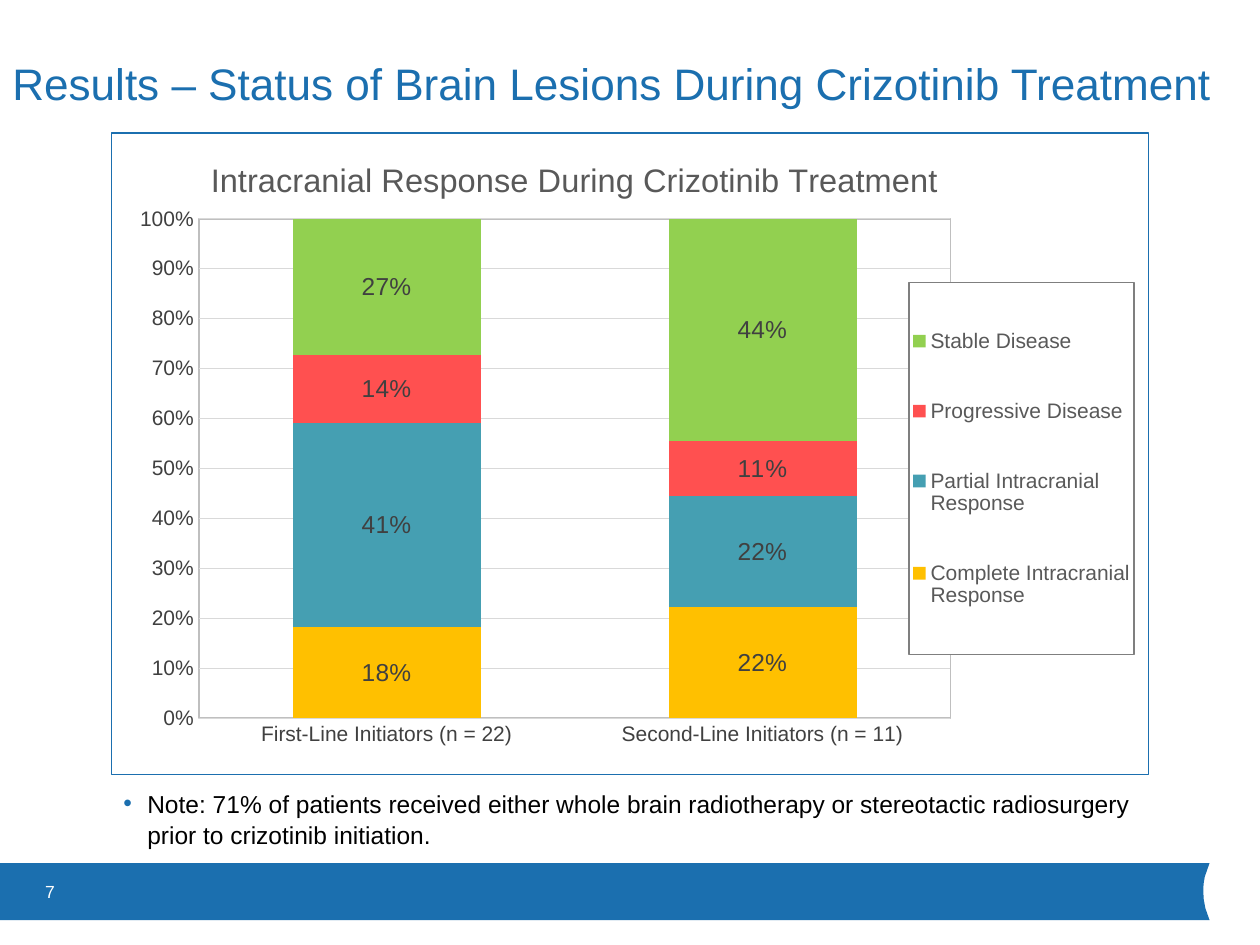
from lxml import etree
from pptx import Presentation
from pptx import util as u
from pptx.chart.data import CategoryChartData
from pptx.dml.color import RGBColor
from pptx.enum import chart as kinds, text
from pptx.oxml import ns, parse_xml

FONT = "Arial"
BLUE, DARK, MID, PALE = "1B6FAF", "404040", "595959", "D9D9D9"

TITLE = "Results – Status of Brain Lesions During Crizotinib Treatment"
NOTE = ("Note: 71% of patients received either whole brain radiotherapy or "
        "stereotactic radiosurgery prior to crizotinib initiation.")
CHART_TITLE = "Intracranial Response During Crizotinib Treatment"
GROUPS = ["First-Line Initiators (n = 22)", "Second-Line Initiators (n = 11)"]
RESPONSES = [  # name, patients per group, labels, colour
    ("Complete Intracranial Response", (4, 2), ("18%", "22%"), "FFC000"),
    ("Partial Intracranial Response", (9, 2), ("41%", "22%"), "459FB2"),
    ("Progressive Disease", (3, 1), ("14%", "11%"), "FF5050"),
    ("Stable Disease", (6, 4), ("27%", "44%"), "92D050"),
]
FOOTER = [(0, 493.2), (691.2, 493.2), (688.5, 501), (687.8, 505), (687.6, 509),
          (687.9, 514), (688.8, 519), (691.2, 525.8), (0, 525.8)]


def rgb(color):
    return RGBColor.from_string(color)


def style(font, size, color):
    font.name, font.size, font.bold = FONT, u.Pt(size), False
    font.color.rgb = rgb(color)


def add_text(slide, words, left, top, width, height, size=14, color="000000",
             anchor=text.MSO_ANCHOR.MIDDLE):
    box = slide.shapes.add_textbox(*map(u.Pt, (left, top, width, height)))
    frame = box.text_frame
    frame.word_wrap, frame.vertical_anchor = True, anchor
    para = frame.paragraphs[0]
    span = para.add_run()
    span.text = words
    style(span.font, size, color)
    return para


def add_bullet(para, color, indent):
    props = para._p.get_or_add_pPr()
    props.set("marL", str(u.Pt(indent)))
    props.set("indent", str(-u.Pt(indent)))
    tint = etree.SubElement(props, ns.qn("a:buClr"))
    etree.SubElement(tint, ns.qn("a:srgbClr"), val=color)
    etree.SubElement(props, ns.qn("a:buFont"), typeface=FONT)
    etree.SubElement(props, ns.qn("a:buChar"), char="•")


def outline(color, width, fill="<a:noFill/>"):
    """Shape properties for a chart part that has no format object."""
    return parse_xml(
        f'<c:spPr {ns.nsdecls("c", "a")}>{fill}<a:ln w="{u.Pt(width)}"><a:solidFill>'
        f'<a:srgbClr val="{color}"/></a:solidFill></a:ln></c:spPr>')


def place(part, inner=False, **fractions):
    """Give a chart part a manual layout in fractions of the chart."""
    for old in part.findall(ns.qn("c:layout")):
        part.remove(old)
    target = '<c:layoutTarget val="inner"/>' if inner else ""
    modes = '<c:xMode val="edge"/><c:yMode val="edge"/>'
    sizes = "".join(f'<c:{key} val="{value}"/>' for key, value in fractions.items())
    layout = parse_xml(f'<c:layout {ns.nsdecls("c")}><c:manualLayout>{target}{modes}'
                       f'{sizes}</c:manualLayout></c:layout>')
    overlay = part.find(ns.qn("c:overlay"))
    if overlay is None:
        part.insert(0, layout)
    else:
        overlay.addprevious(layout)


def format_axis(axis):
    axis.major_tick_mark = axis.minor_tick_mark = kinds.XL_TICK_MARK.NONE
    style(axis.tick_labels.font, 12, DARK)


def format_line(line, color, width):
    line.color.rgb, line.width = rgb(color), u.Pt(width)


def add_response_chart(slide, left, top, width, height):
    data = CategoryChartData()
    data.categories = GROUPS
    for name, values, _, _ in RESPONSES:
        data.add_series(name, values)
    chart = slide.shapes.add_chart(kinds.XL_CHART_TYPE.COLUMN_STACKED_100,
                                   *map(u.Pt, (left, top, width, height)), data).chart
    style(chart.font, 10, "000000")

    chart.has_title = True
    para = chart.chart_title.text_frame.paragraphs[0]
    span = para.add_run()
    span.text = CHART_TITLE
    style(span.font, 18.6, MID)

    chart.has_legend = True
    legend = chart.legend
    legend.position = kinds.XL_LEGEND_POSITION.RIGHT
    legend.include_in_layout = False
    style(legend.font, 12, MID)

    format_axis(chart.category_axis)
    format_line(chart.category_axis.format.line, PALE, 0.75)
    shares = chart.value_axis
    format_axis(shares)
    shares.minimum_scale, shares.maximum_scale, shares.major_unit = 0, 1, 0.1
    shares.tick_labels.number_format = "0%"
    shares.tick_labels.number_format_is_linked = False
    shares.format.line.fill.background()
    format_line(shares.major_gridlines.format.line, PALE, 0.75)

    plot = chart.plots[0]
    plot.gap_width, plot.overlap, plot.vary_by_categories = 100, 100, False
    for series, (_, _, labels, color) in zip(plot.series, RESPONSES):
        series.format.fill.solid()
        series.format.fill.fore_color.rgb = rgb(color)
        series.data_labels.show_value = True
        style(series.data_labels.font, 14, DARK)
        for index, label in enumerate(labels):
            mark = series.points[index].data_label
            mark.position = kinds.XL_LABEL_POSITION.CENTER
            span = mark.text_frame.paragraphs[0].add_run()
            span.text = label
            style(span.font, 14, DARK)

    space = chart._chartSpace
    area = space.chart.plotArea
    place(chart.chart_title._element, x=0.09, y=0.03)
    place(area, inner=True, x=0.084, y=0.134, w=0.725, h=0.779)
    place(legend._element, x=0.769, y=0.233, w=0.217, h=0.58)
    area.append(outline("BFBFBF", 1))
    white = '<a:solidFill><a:srgbClr val="FFFFFF"/></a:solidFill>'
    legend._element.find(ns.qn("c:overlay")).addnext(outline("7F7F7F", 0.75, white))
    space.chart.addnext(outline(BLUE, 0.75))


def add_footer(slide):
    corners = [(u.Pt(x), u.Pt(y)) for x, y in FOOTER]
    builder = slide.shapes.build_freeform(*corners[0], scale=1.0)
    builder.add_line_segments(corners[1:], close=True)
    band = builder.convert_to_shape()
    band.shadow.inherit = False
    band.fill.solid()
    band.fill.fore_color.rgb = rgb(BLUE)
    band.line.fill.background()


def main():
    deck = Presentation()
    deck.slide_width, deck.slide_height = u.Pt(720), u.Pt(540)
    slide = deck.slides.add_slide(deck.slide_layouts[6])
    add_footer(slide)
    add_text(slide, "7", 18.7, 493.2, 167.8, 32.4, size=10, color="FFFFFF")
    add_response_chart(slide, 63.4, 75.6, 593.3, 367.2)
    add_text(slide, TITLE, 0, 10.8, 701.3, 72.7, size=25.2, color=BLUE)
    note = add_text(slide, NOTE, 63.4, 464.4, 593.3, 24.5,
                    anchor=text.MSO_ANCHOR.BOTTOM)
    note.line_spacing, note.space_before = 1.06, u.Pt(2.6)
    add_bullet(note, BLUE, 13.7)
    deck.save("out.pptx")


if __name__ == "__main__":
    main()
